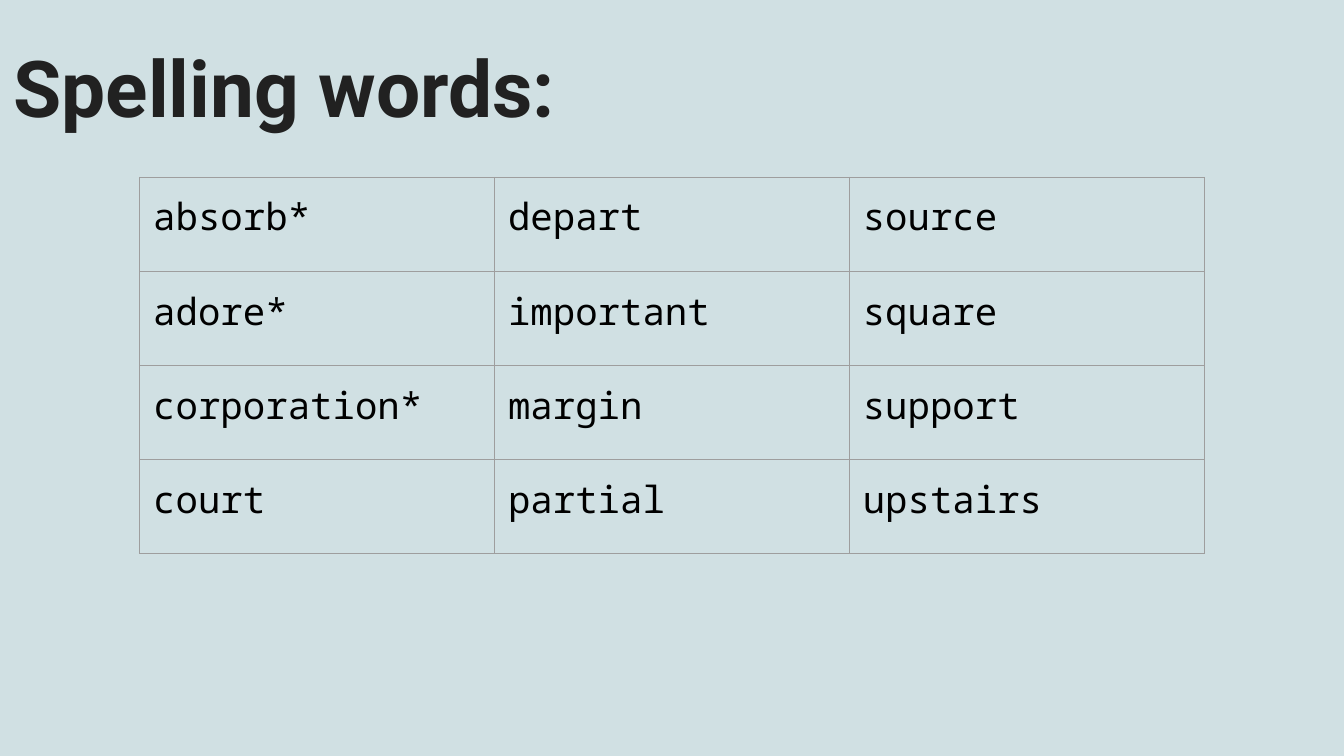
from dataclasses import dataclass

from lxml.etree import SubElement
from pptx import Presentation
from pptx.dml.color import RGBColor
from pptx.enum.text import MSO_ANCHOR, PP_ALIGN
from pptx.oxml.ns import qn
from pptx.slide import Slide
from pptx.table import _Cell
from pptx.text.text import TextFrame
from pptx.util import Inches, Pt

COLORS = {
    "background": "D0E0E3",
    "title": "212121",
    "word": "000000",
    "border": "9E9E9E",
}
MARGIN = Inches(0.1)


@dataclass
class TextStyle:
    font: str
    size: float
    color: str
    bold: bool = False


@dataclass
class WordGrid:
    left: float
    top: float
    column_width: float
    row_height: float
    rows: list[tuple[str, ...]]


TITLE_STYLE = TextStyle("Roboto", 42, "title", bold=True)
WORD_STYLE = TextStyle("Noto Sans Mono", 20, "word")

SPELLING_WORDS = WordGrid(1.04, 1.32, 2.64, 0.7, [
    ("absorb*", "depart", "source"),
    ("adore*", "important", "square"),
    ("corporation*", "margin", "support"),
    ("court", "partial", "upstairs"),
])


def write_text(text_frame: TextFrame, text: str, style: TextStyle) -> None:
    text_frame.text = text
    paragraph = text_frame.paragraphs[0]
    paragraph.alignment = PP_ALIGN.LEFT
    font = paragraph.runs[0].font
    font.name = style.font
    font.size = Pt(style.size)
    font.bold = style.bold
    font.color.rgb = RGBColor.from_string(COLORS[style.color])


def add_borders(cell: _Cell, width: float = 0.75) -> None:
    properties = cell._tc.get_or_add_tcPr()
    for side in ("a:lnL", "a:lnR", "a:lnT", "a:lnB"):
        line = SubElement(properties, qn(side), w=str(Pt(width)))
        fill = SubElement(line, qn("a:solidFill"))
        SubElement(fill, qn("a:srgbClr"), val=COLORS["border"])


def add_title(slide: Slide, text: str) -> None:
    title = slide.shapes.title
    title.left, title.top = Inches(0), Inches(0.19)
    title.width, title.height = Inches(9.07), Inches(0.88)
    text_frame = title.text_frame
    text_frame.word_wrap = True
    text_frame.vertical_anchor = MSO_ANCHOR.TOP
    text_frame.margin_left = text_frame.margin_right = MARGIN
    text_frame.margin_top = text_frame.margin_bottom = MARGIN
    write_text(text_frame, text, TITLE_STYLE)


def add_word_table(slide: Slide, grid: WordGrid) -> None:
    row_count, column_count = len(grid.rows), len(grid.rows[0])
    table = slide.shapes.add_table(
        row_count, column_count, Inches(grid.left), Inches(grid.top),
        Inches(grid.column_width * column_count),
        Inches(grid.row_height * row_count),
    ).table
    table.first_row = table.horz_banding = False
    for row, words in zip(table.rows, grid.rows):
        for cell, word in zip(row.cells, words):
            add_borders(cell)
            cell.fill.background()
            cell.vertical_anchor = MSO_ANCHOR.TOP
            cell.margin_left = cell.margin_right = MARGIN
            cell.margin_top = cell.margin_bottom = MARGIN
            write_text(cell.text_frame, word, WORD_STYLE)


def main() -> None:
    presentation = Presentation()
    presentation.slide_width = Inches(10)
    presentation.slide_height = presentation.slide_width * 9 // 16
    title_only = presentation.slide_layouts[5]
    slide = presentation.slides.add_slide(title_only)
    background = slide.background.fill
    background.solid()
    background.fore_color.rgb = RGBColor.from_string(COLORS["background"])
    add_title(slide, "Spelling words:")
    add_word_table(slide, SPELLING_WORDS)
    presentation.save("out.pptx")


if __name__ == "__main__":
    main()
